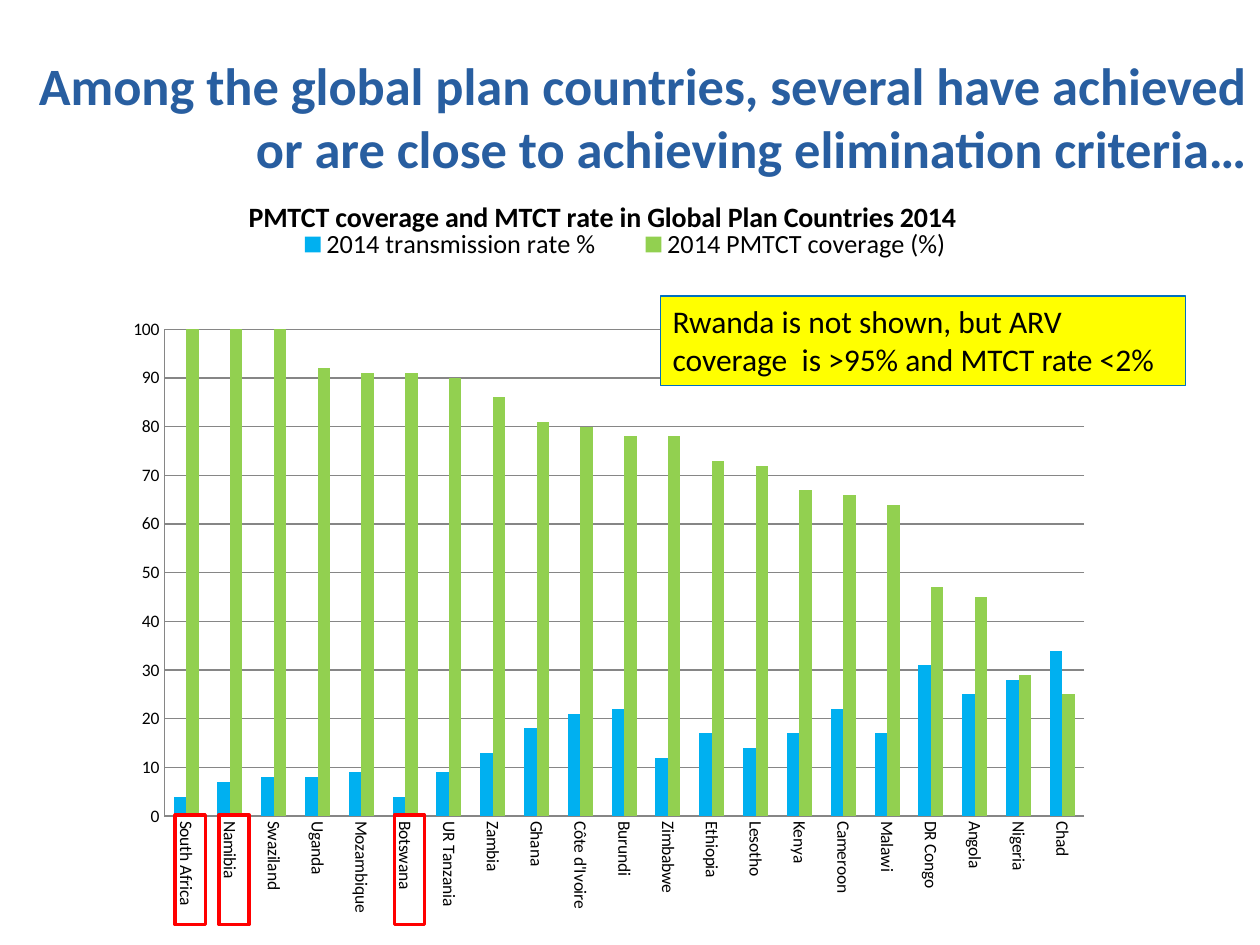
from dataclasses import dataclass
from typing import Optional

from lxml import etree
from pptx import Presentation
from pptx.chart.data import CategoryChartData as ChartData
from pptx.dml.color import RGBColor
from pptx.enum.chart import XL_CHART_TYPE as Kind, XL_LEGEND_POSITION as Spot
from pptx.enum.chart import XL_TICK_MARK as Tick
from pptx.enum.shapes import MSO_SHAPE as Preset
from pptx.enum.text import MSO_ANCHOR as Anchor, PP_ALIGN as Align
from pptx.oxml.ns import qn
from pptx.util import Pt

BLACK = RGBColor(0, 0, 0)
NAVY = RGBColor(0x28, 0x5E, 0xA0)
BLUE = RGBColor(0, 0x70, 0xC0)
SKY = RGBColor(0, 0xB0, 0xF0)
GREEN = RGBColor(0x92, 0xD0, 0x50)
YELLOW = RGBColor(255, 255, 0)
RED = RGBColor(255, 0, 0)
GREY = RGBColor(0x86, 0x86, 0x86)
FACE = "Calibri"


@dataclass
class Box:
    left: float
    top: float
    width: float
    height: float

    def place(self) -> tuple:
        return Pt(self.left), Pt(self.top), Pt(self.width), Pt(self.height)


@dataclass
class Series:
    name: str
    color: RGBColor
    values: tuple


LANDS = ("South Africa", "Namibia", "Swaziland", "Uganda", "Mozambique",
         "Botswana", "UR Tanzania", "Zambia", "Ghana", "Côte d'Ivoire",
         "Burundi", "Zimbabwe", "Ethiopia", "Lesotho", "Kenya", "Cameroon",
         "Malawi", "DR Congo", "Angola", "Nigeria", "Chad")
MARKED = ("South Africa", "Namibia", "Botswana")
SERIES = (
    Series("2014 transmission rate %", SKY,
           (4, 7, 8, 8, 9, 4, 9, 13, 18, 21, 22, 12, 17, 14, 17, 22, 17, 31,
            25, 28, 34)),
    Series("2014 PMTCT coverage (%)", GREEN,
           (100, 100, 100, 92, 91, 91, 90, 86, 81, 80, 78, 78, 73, 72, 67, 66,
            64, 47, 45, 29, 25)),
)


def style(font, size: float, color: RGBColor = BLACK, bold: bool = False) -> None:
    look = {"name": FACE, "size": Pt(size), "bold": bold}
    for key, value in look.items():
        setattr(font, key, value)
    font.color.rgb = color


def write(frame, text: str, size: float, color: RGBColor, bold: bool, align) -> None:
    frame.word_wrap = True
    frame.vertical_anchor = Anchor.TOP
    par = frame.paragraphs[0]
    par.alignment = align
    run = par.add_run()
    run.text = text
    style(run.font, size, color, bold)


def add_rect(slide, box: Box, line: RGBColor, weight: float,
             fill: Optional[RGBColor] = None):
    rect = slide.shapes.add_shape(Preset.RECTANGLE, *box.place())
    rect.shadow.inherit = False
    if fill is None:
        rect.fill.background()
    else:
        rect.fill.solid()
        rect.fill.fore_color.rgb = fill
    rect.line.color.rgb = line
    rect.line.width = Pt(weight)
    return rect


def set_layout(part, places: dict, inner: bool = False) -> None:
    """Fix a chart part at fractions of the chart's size."""
    old = part.find(qn("c:layout"))
    if old is None:
        old = etree.Element(qn("c:layout"))
        # The layout follows the title's text or the legend's position
        lead = [part.find(qn(tag)) for tag in ("c:tx", "c:legendPos")]
        first = next((node for node in lead if node is not None), None)
        if first is None:
            part.insert(0, old)
        else:
            first.addnext(old)
    for child in list(old):
        old.remove(child)
    manual = etree.SubElement(old, qn("c:manualLayout"))
    if inner:
        etree.SubElement(manual, qn("c:layoutTarget")).set("val", "inner")
    for key in ("x", "y"):
        etree.SubElement(manual, qn(f"c:{key}Mode")).set("val", "edge")
    for key, value in places.items():
        etree.SubElement(manual, qn(f"c:{key}")).set("val", str(value))


def add_bars(slide, box: Box) -> None:
    data = ChartData()
    data.categories = LANDS
    for item in SERIES:
        data.add_series(item.name, item.values)
    chart = slide.shapes.add_chart(Kind.COLUMN_CLUSTERED, *box.place(), data).chart
    style(chart.font, 10)

    # Title and legend
    frame = chart.chart_title.text_frame
    frame.text = "PMTCT coverage and MTCT rate in Global Plan Countries 2014"
    style(frame.paragraphs[0].runs[0].font, 16, bold=True)
    chart.has_legend = True
    legend = chart.legend
    legend.position = Spot.TOP
    legend.include_in_layout = False
    style(legend.font, 15)

    # Bars
    plot = chart.plots[0]
    for key, value in {"gap_width": 150, "overlap": 0,
                       "vary_by_categories": False}.items():
        setattr(plot, key, value)
    for bar, item in zip(plot.series, SERIES):
        bar.format.fill.solid()
        bar.format.fill.fore_color.rgb = item.color

    # Axes
    lands, scale = chart.category_axis, chart.value_axis
    for axis in (lands, scale):
        axis.major_tick_mark = axis.minor_tick_mark = Tick.NONE
        axis.format.line.color.rgb = GREY
        style(axis.tick_labels.font, 10)
    for key, value in {"minimum_scale": 0, "maximum_scale": 100, "major_unit": 10,
                       "has_major_gridlines": True}.items():
        setattr(scale, key, value)
    scale.major_gridlines.format.line.color.rgb = GREY
    turn = lands._element.find(qn("c:txPr")).find(qn("a:bodyPr"))
    turn.set("rot", "5400000")
    turn.set("vert", "horz")

    # Positions inside the chart
    root = chart._chartSpace.chart
    set_layout(root.find(qn("c:title")), {"x": 0.13, "y": 0.01})
    set_layout(legend._element, {"x": 0.15, "y": 0.05, "w": 0.73, "h": 0.06})
    set_layout(root.plotArea, {"x": 0.05, "y": 0.194, "w": 0.928, "h": 0.655}, True)


def main() -> None:
    deck = Presentation()
    deck.slide_width, deck.slide_height = Pt(720), Pt(540)
    slide = deck.slides.add_slide(deck.slide_layouts[6])

    # Heading
    head = slide.shapes.add_textbox(*Box(0, 26.6, 720, 97.2).place())
    write(head.text_frame, "Among the global plan countries, several have achieved "
          "or are close to achieving elimination criteria…", 30, NAVY, True, Align.RIGHT)

    # Chart
    add_bars(slide, Box(65.5, 105.8, 566.6, 424.8))

    # Note
    note = add_rect(slide, Box(377.3, 169.2, 300.2, 51.1), BLUE, 0.75, YELLOW)
    write(note.text_frame, "Rwanda is not shown, but ARV coverage  is >95% "
          "and MTCT rate <2%", 18, BLACK, False, Align.LEFT)

    # Frames around the marked countries
    step = 25.05
    for land in MARKED:
        left = 100.1 + LANDS.index(land) * step
        add_rect(slide, Box(left, 465.8, 17.3, 62.6), RED, 2)

    deck.save("out.pptx")


if __name__ == "__main__":
    main()
